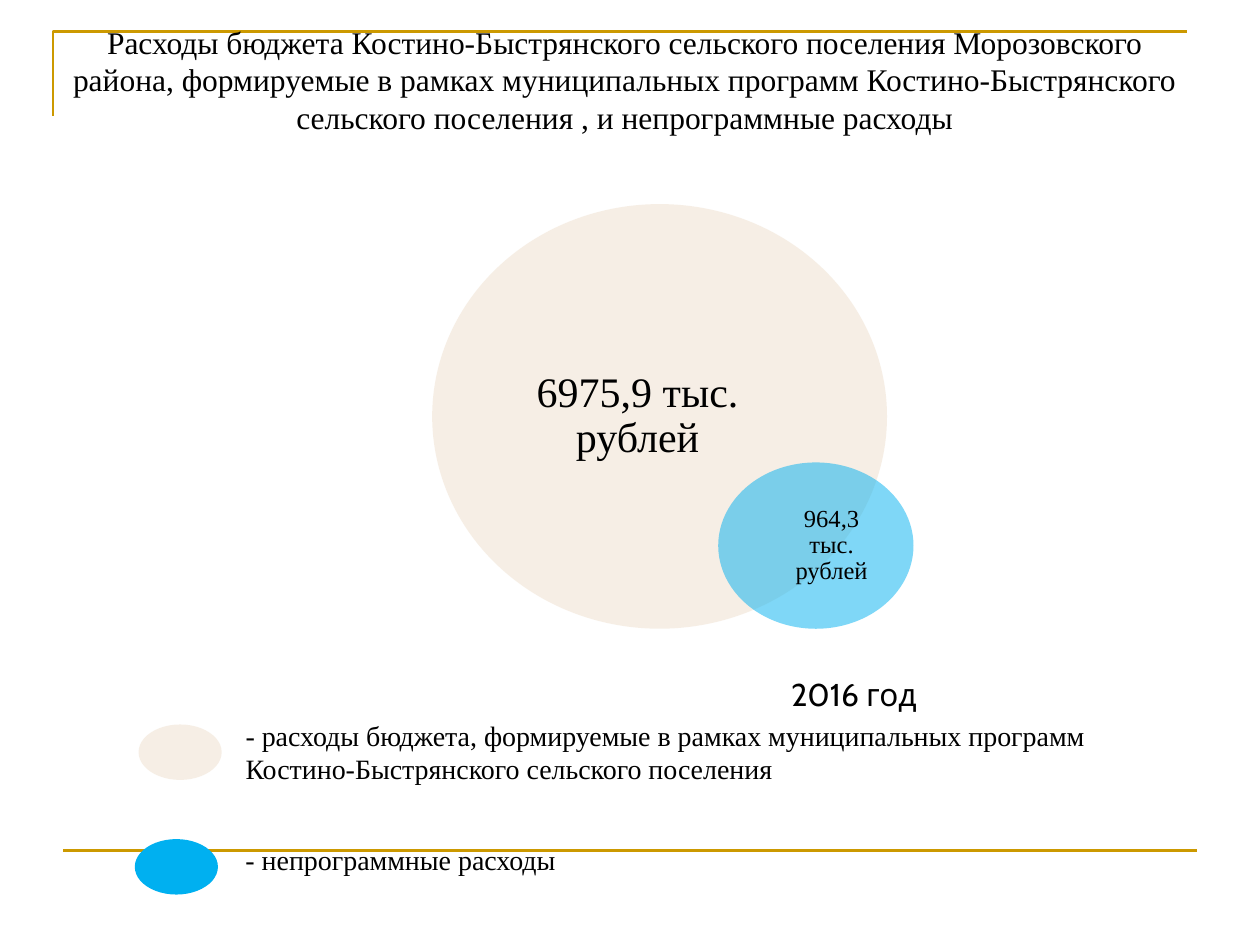
from lxml import etree
from pptx import Presentation
from pptx.dml.color import RGBColor
from pptx.enum.shapes import MSO_CONNECTOR, MSO_SHAPE
from pptx.enum.text import MSO_ANCHOR, MSO_AUTO_SIZE, PP_ALIGN
from pptx.oxml.ns import qn
from pptx.util import Inches, Pt

GOLD, BEIGE, BLUE, BLACK = "CC9900", "EEDFCC", "00B0F0", "000000"
SERIF = "Times New Roman"


def color(value):
    return RGBColor.from_string(value)


def style_line(item):
    item.line.color.rgb = color(GOLD)
    item.line.width = Pt(1.5)


def add_corner(page, left, top, right, bottom):
    """Draw the open angle at the top left of the page."""
    builder = page.shapes.build_freeform(Inches(left), Inches(bottom))
    builder.add_line_segments(
        [(Inches(left), Inches(top)), (Inches(right), Inches(top))], close=False)
    corner = builder.convert_to_shape()
    corner.shadow.inherit = False
    corner.fill.background()
    style_line(corner)


def add_rule(page, left, right, y):
    rule = page.shapes.add_connector(
        MSO_CONNECTOR.STRAIGHT, Inches(left), Inches(y), Inches(right), Inches(y))
    style_line(rule)
    etree.SubElement(rule._element.spPr, qn("a:effectLst"))


def write(frame, text, size, font=SERIF, align=PP_ALIGN.LEFT, spacing=None):
    frame.word_wrap = True
    para = frame.paragraphs[0]
    para.alignment = align
    if spacing:
        para.line_spacing = spacing
    span = para.add_run()
    span.text = text
    span.font.size = Pt(size)
    span.font.name = font
    span.font.color.rgb = color(BLACK)


def add_text(page, position, text, size, **style):
    box = page.shapes.add_textbox(*map(Inches, position))
    box.text_frame.auto_size = MSO_AUTO_SIZE.SHAPE_TO_FIT_TEXT
    write(box.text_frame, text, size, **style)


def add_ellipse(page, position, fill, opacity=100):
    ellipse = page.shapes.add_shape(MSO_SHAPE.OVAL, *map(Inches, position))
    ellipse.shadow.inherit = False
    ellipse.line.fill.background()
    ellipse.fill.solid()
    ellipse.fill.fore_color.rgb = color(fill)
    if opacity < 100:
        tint = ellipse._element.spPr.find(f"{qn('a:solidFill')}/{qn('a:srgbClr')}")
        etree.SubElement(tint, qn("a:alpha")).set("val", str(opacity * 1000))
    return ellipse


def add_amount(page, position, fill, text, size, left_inset, right_inset):
    """Add a translucent circle with its sum, shifted sideways by the insets."""
    frame = add_ellipse(page, position, fill, 50).text_frame
    frame.margin_left, frame.margin_right = Inches(left_inset), Inches(right_inset)
    frame.margin_top = frame.margin_bottom = 0
    frame.vertical_anchor = MSO_ANCHOR.MIDDLE
    write(frame, text, size, align=PP_ALIGN.CENTER, spacing=0.9)


def main():
    deck = Presentation()
    deck.slide_width, deck.slide_height = Inches(10), Inches(7.5)
    page = deck.slides.add_slide(deck.slide_layouts[6])

    add_corner(page, 0.42, 0.25, 9.42, 0.92)
    add_rule(page, 0.5, 9.5, 6.75)
    add_text(page, (0.43, 0.13, 9.06, 1),
             "Расходы бюджета Костино-Быстрянского сельского поселения Морозовского "
             "района, формируемые в рамках муниципальных программ Костино-Быстрянского "
             "сельского поселения , и непрограммные расходы",
             18, align=PP_ALIGN.CENTER)

    add_ellipse(page, (1.1, 5.75, 0.66, 0.44), BEIGE, 50)
    add_text(page, (1.85, 5.65, 7.72, 0.64),
             "- расходы бюджета, формируемые в рамках муниципальных программ "
             "Костино-Быстрянского сельского поселения", 16)
    add_ellipse(page, (1.07, 6.66, 0.66, 0.44), BLUE)
    add_text(page, (1.85, 6.64, 6.77, 0.37), "- непрограммные расходы", 16)
    add_text(page, (6.18, 5.31, 3.27, 0.4), "2016 год", 18, font="Cabin")

    add_amount(page, (3.43, 1.62, 3.61, 3.37), BEIGE,
               "6975,9 тыс. рублей", 24, 0, 0.35)
    add_amount(page, (5.7, 3.67, 1.55, 1.32), BLUE,
               "964,3 тыс. рублей", 14, 0.26, 0.01)
    deck.save("out.pptx")


if __name__ == "__main__":
    main()
